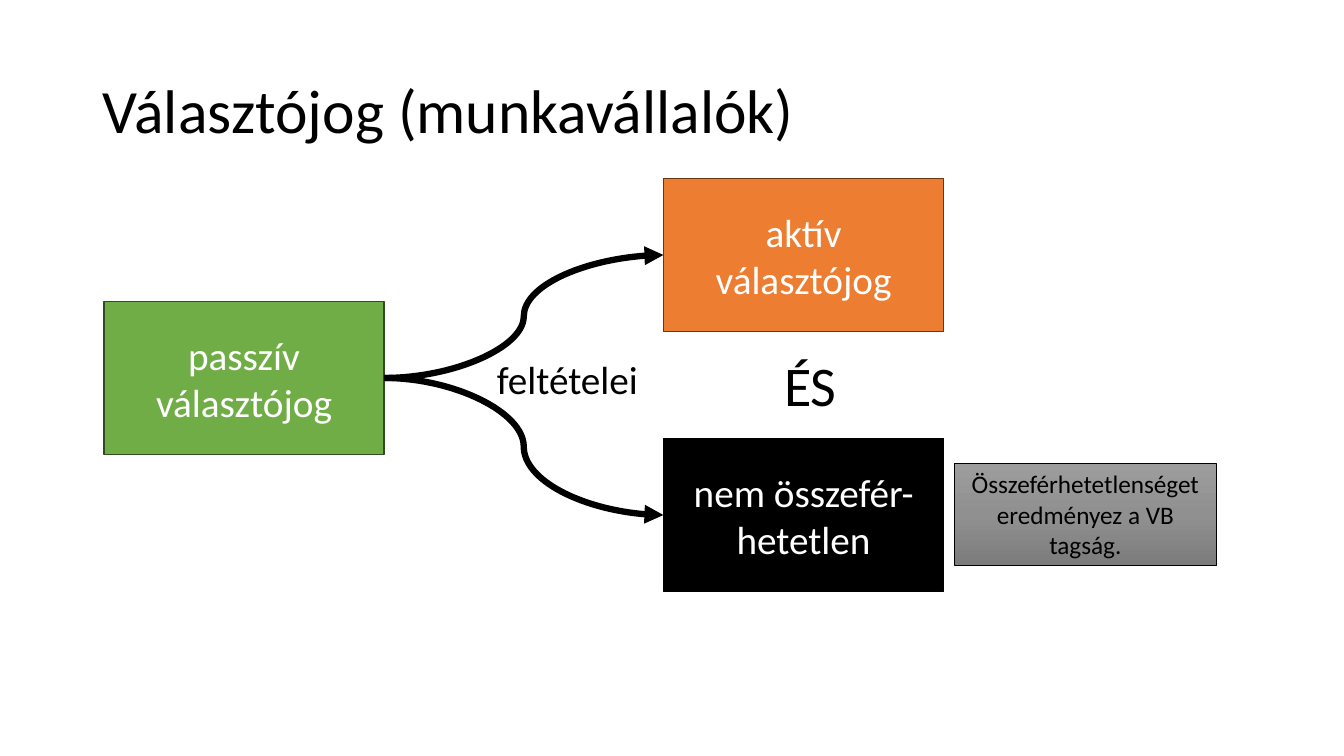
import copy
import pptx
import pptx.util
import pptx.dml.color
import pptx.enum.shapes
import pptx.enum.text
import pptx.oxml
import pptx.oxml.ns

Inches, Pt = pptx.util.Inches, pptx.util.Pt
PP_ALIGN, ANCHOR = pptx.enum.text.PP_ALIGN, pptx.enum.text.MSO_ANCHOR
RECT = pptx.enum.shapes.MSO_SHAPE.RECTANGLE
CURVE = pptx.enum.shapes.MSO_CONNECTOR.CURVE
qn = pptx.oxml.ns.qn


def rgb(value):
    return pptx.dml.color.RGBColor.from_string(value)


def write(sp, text, size, color, align, anchor, wrap=True):
    tf = sp.text_frame
    tf.text = text
    tf.word_wrap = wrap
    tf.vertical_anchor = anchor
    p = tf.paragraphs[0]
    p.alignment = align
    r = p.runs[0]
    r.font.name = "Calibri"
    r.font.size = Pt(size)
    r.font.color.rgb = rgb(color)


prs = pptx.Presentation()
prs.slide_width, prs.slide_height = Inches(13.33), Inches(7.5)
s = prs.slides.add_slide(prs.slide_layouts[5])

# Title
title = s.shapes.title
title.left, title.top = Inches(0.92), Inches(0.4)
title.width, title.height = Inches(11.5), Inches(1.45)
write(title, "Választójog (munkavállalók)", 44, "000000", PP_ALIGN.LEFT, ANCHOR.MIDDLE)
title.text_frame.paragraphs[0].line_spacing = 0.9

# Boxes: the right to be elected and its two conditions
boxes = []
for text, left, top, fill, line in [
    ("passzív választójog", 1.03, 2.99, "70AD47", "314C1F"),
    ("aktív választójog", 6.58, 1.77, "ED7D31", "683715"),
    ("nem összefér-hetetlen", 6.58, 4.35, "000000", "000000"),
]:
    sp = s.shapes.add_shape(RECT, Inches(left), Inches(top), Inches(2.78), Inches(1.52))
    sp.shadow.inherit = False
    sp.fill.solid()
    sp.fill.fore_color.rgb = rgb(fill)
    sp.line.color.rgb = rgb(line)
    sp.line.width = Pt(1)
    write(sp, text, 28, "FFFFFF", PP_ALIGN.CENTER, ANCHOR.MIDDLE)
    boxes.append(sp)
passive, *conditions = boxes

# Labels
for text, left, top, width, height, size in [
    ("feltételei", 4.83, 3.48, 1.61, 0.57, 28),
    ("ÉS", 7.68, 3.43, 0.73, 0.77, 40),
]:
    sp = s.shapes.add_textbox(Inches(left), Inches(top), Inches(width), Inches(height))
    write(sp, text, size, "000000", PP_ALIGN.LEFT, ANCHOR.TOP, wrap=False)

# Curved arrows to the conditions
for box in conditions:
    cxn = s.shapes.add_connector(
        CURVE,
        passive.left + passive.width, passive.top + passive.height // 2,
        box.left, box.top + box.height // 2,
    )
    cxn.begin_connect(passive, 3)
    cxn.end_connect(box, 1)
    cxn.line.color.rgb = rgb("000000")
    cxn.line.width = Pt(4.5)
    ln = cxn.line._get_or_add_ln()
    ln.append(pptx.oxml.parse_xml(
        '<a:tailEnd xmlns:a="http://schemas.openxmlformats.org/drawingml/2006/main" type="triangle"/>'))
    ln.addnext(ln.makeelement(qn("a:effectLst"), {}))

# Note with a grey gradient
note = s.shapes.add_shape(RECT, Inches(9.47), Inches(4.6), Inches(2.59), Inches(1.01))
note.shadow.inherit = False
note.fill.gradient()
note.fill.gradient_angle = 270
first_stop = next(note._element.iter(qn("a:gs")))
first_stop.addnext(copy.deepcopy(first_stop))
for stop, position, color in zip(
    note.fill.gradient_stops, (0, 0.5, 1), ("9D9D9D", "909090", "7C7C7C")
):
    stop.position = position
    stop.color.rgb = rgb(color)
note.line.color.rgb = rgb("000000")
note.line.width = Pt(0.5)
write(note, "Összeférhetetlenséget eredményez a VB tagság.", 18, "000000",
      PP_ALIGN.CENTER, ANCHOR.TOP)

prs.save("out.pptx")
